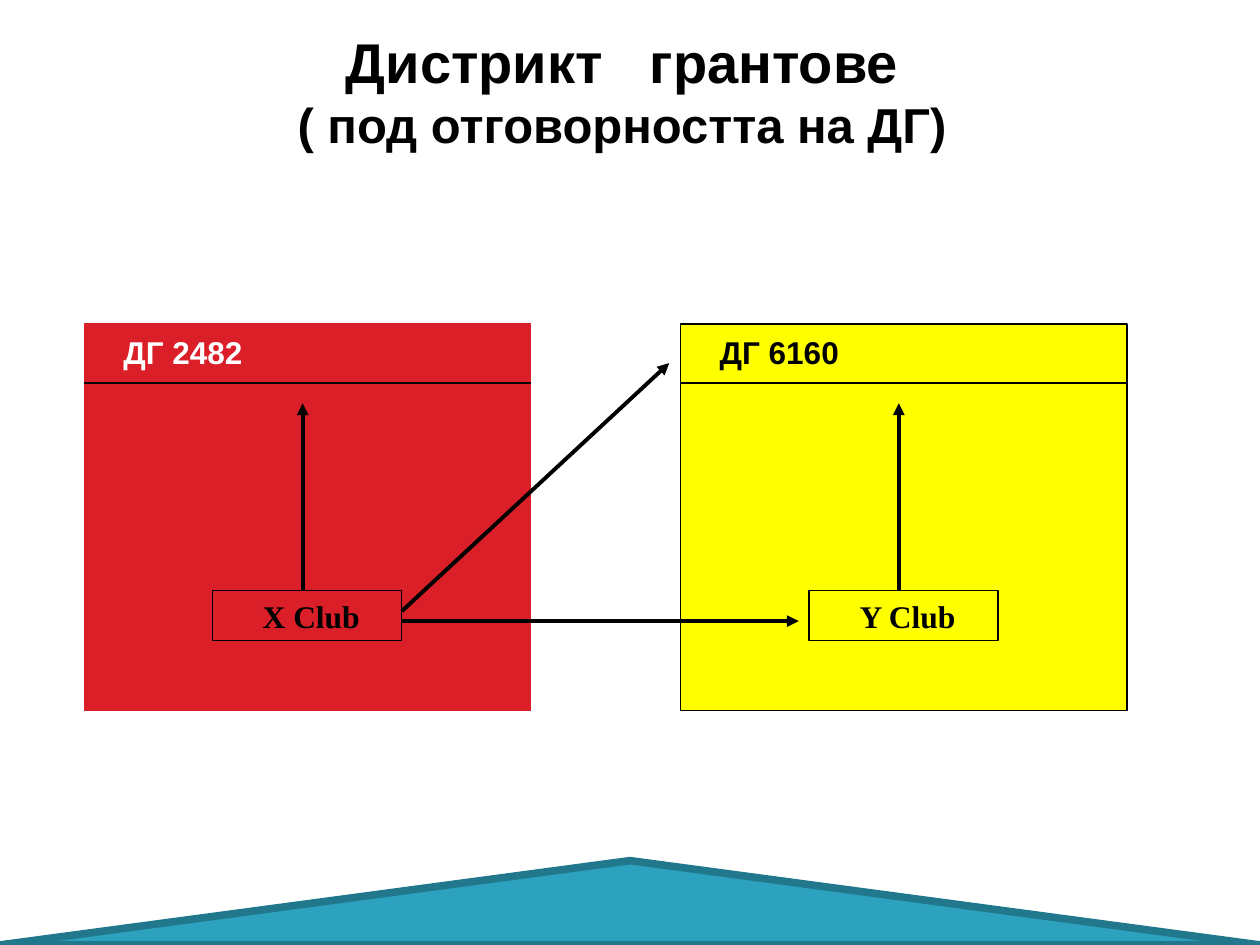
import pptx
import pptx.dml.color
import pptx.enum.shapes
import pptx.enum.text
import pptx.oxml
import pptx.oxml.ns
import pptx.util
from pptx.util import Cm

COLORS = {
    "black": "000000",
    "white": "FFFFFF",
    "red": "DA1F28",
    "yellow": "FFFF00",
    "teal": "2DA2BF",
    "dark teal": "21788D",
}
SHAPES = pptx.enum.shapes.MSO_SHAPE
ALIGN = pptx.enum.text.PP_ALIGN
ANCHOR = pptx.enum.text.MSO_ANCHOR


def rgb(name):
    return pptx.dml.color.RGBColor.from_string(COLORS[name])


def write(paragraph, text, size=18, font="Arial", color="black", align=ALIGN.LEFT):
    paragraph.alignment = align
    run = paragraph.add_run()
    run.text = text
    run.font.size = pptx.util.Pt(size)
    run.font.name = font
    run.font.bold = True
    run.font.color.rgb = rgb(color)
    return run


prs = pptx.Presentation()
prs.slide_width, prs.slide_height = Cm(25.4), Cm(19.05)
slide = prs.slides.add_slide(prs.slide_layouts[5])
shapes = slide.shapes

# Title
title = shapes.title
title.left, title.top, title.width, title.height = Cm(5.69), Cm(0.43), Cm(13.7), Cm(2.8)
heading = title.text_frame
heading.auto_size = pptx.enum.text.MSO_AUTO_SIZE.NONE
heading.word_wrap = False
heading.vertical_anchor = ANCHOR.TOP
first_line = heading.paragraphs[0]
write(first_line, "Дистрикт", size=32, align=ALIGN.CENTER)
word_gap = write(first_line, " ", size=32, align=ALIGN.CENTER)
word_gap._r.get_or_add_rPr().set("spc", "1780")  # widens the space between the words
write(first_line, "грантове", size=32, align=ALIGN.CENTER)
write(heading.add_paragraph(), "( под отговорността на ДГ)", size=28, align=ALIGN.CENTER)

# Footer decoration, district panels and club boxes: left, top, width, height
panel_left, panel_step = 1.7, 12.02
districts = [
    ("ДГ 2482", "X Club", "red", "red", "white"),
    ("ДГ 6160", "Y Club", "yellow", "black", "black"),
]
boxes = [(SHAPES.ISOSCELES_TRIANGLE, 0, 17.35, 25.4, 1.7, "teal", "dark teal", 4.33, None)]
lines = []
labels = []
for index, (district, club, fill, outline, label_color) in enumerate(districts):
    left = panel_left + index * panel_step
    boxes.append((SHAPES.RECTANGLE, left, 6.53, 9, 7.8, fill, outline, 0.75, None))
    boxes.append((SHAPES.RECTANGLE, left + 2.59, 11.91, 3.81, 1, None, "black", 0.75, club))
    lines.append((left, 7.72, left + 9, 7.72, 0.75, False))
    lines.append((left + 4.4, 11.91, left + 4.4, 8.13, 2.25, True))
    labels.append((left + 0.54, district, label_color))

# Arrows from the X club to the other district and its club
lines.append((8.1, 12.32, 13.49, 7.32, 2.25, True))
lines.append((8.1, 12.52, 16.1, 12.52, 2.25, True))

for kind, left, top, width, height, fill, outline, weight, club in boxes:
    box = shapes.add_shape(kind, Cm(left), Cm(top), Cm(width), Cm(height))
    box.shadow.inherit = False
    if fill:
        box.fill.solid()
        box.fill.fore_color.rgb = rgb(fill)
    else:
        box.fill.background()
    box.line.color.rgb = rgb(outline)
    box.line.width = pptx.util.Pt(weight)
    if club:
        frame = box.text_frame
        frame.margin_left = Cm(0.41)
        frame.vertical_anchor = ANCHOR.MIDDLE
        write(frame.paragraphs[0], club, font="Times New Roman", align=ALIGN.CENTER)

for left, district, color in labels:
    label = shapes.add_textbox(Cm(left), Cm(6.58), Cm(2.95), Cm(1.02))
    label.text_frame.word_wrap = False
    write(label.text_frame.paragraphs[0], district, color=color)

for x1, y1, x2, y2, weight, has_arrowhead in lines:
    connector = shapes.add_connector(
        pptx.enum.shapes.MSO_CONNECTOR.STRAIGHT, Cm(x1), Cm(y1), Cm(x2), Cm(y2)
    )
    connector.line.color.rgb = rgb("black")
    connector.line.width = pptx.util.Pt(weight)
    if has_arrowhead:
        arrowhead = pptx.oxml.parse_xml(
            f'<a:tailEnd {pptx.oxml.ns.nsdecls("a")} type="triangle"/>'
        )
        connector.line._get_or_add_ln().append(arrowhead)
    no_effects = pptx.oxml.parse_xml(f'<a:effectLst {pptx.oxml.ns.nsdecls("a")}/>')
    connector._element.spPr.append(no_effects)

prs.save("out.pptx")
